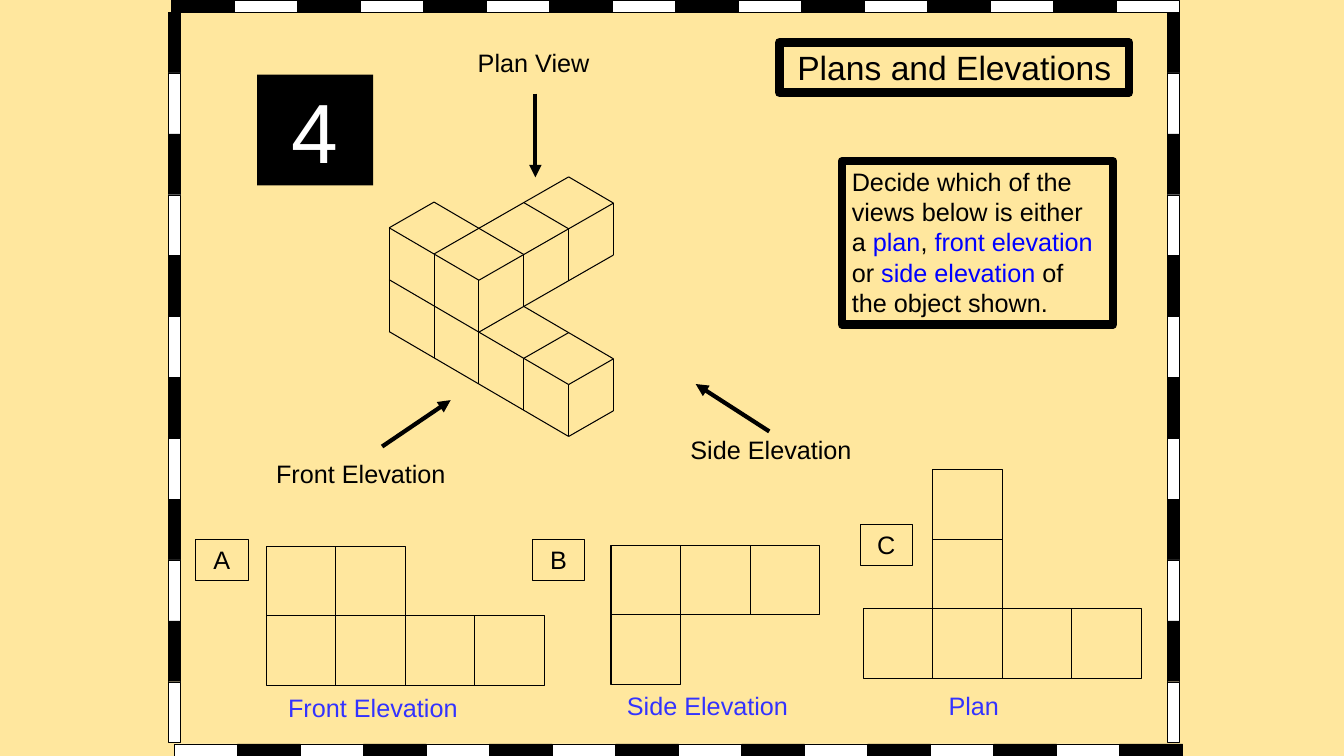
from lxml import etree
from pptx import Presentation
from pptx.dml.color import RGBColor
from pptx.enum.shapes import MSO_CONNECTOR as Connector, MSO_SHAPE as Shape
from pptx.enum.text import MSO_ANCHOR as Anchor, PP_ALIGN as Align
from pptx.oxml.ns import qn
from pptx.util import Inches, Pt

BLACK, WHITE, BLUE, ANSWER = "000000", "FFFFFF", "0000FF", "3333FF"
SAND = "FFE79E"
CELL = 0.69

SOLID_EDGES = [
    ((4, 0, 2), (4, 1, 2)), ((4, 0, 2), (0, 0, 2)), ((4, 0, 2), (4, 0, 1)),
    ((4, 0, 1), (4, 1, 1)), ((4, 0, 1), (0, 0, 1)), ((2, 0, 2), (2, 0, 0)),
    ((3, 0, 2), (3, 0, 1)), ((4, 1, 1), (2, 1, 1)), ((2, 0, 1), (2, 3, 1)),
    ((3, 0, 1), (3, 1, 1)), ((1, 0, 0), (1, 0, 2)), ((2, 0, 0), (2, 3, 0)),
    ((2, 0, 0), (0, 0, 0)), ((1, 0, 0), (1, 3, 0)), ((0, 1, 0), (2, 1, 0)),
    ((4, 1, 1), (4, 1, 2)), ((2, 1, 0), (2, 1, 1)), ((1, 2, 0), (2, 2, 0)),
    ((2, 2, 0), (2, 2, 1)), ((1, 3, 0), (2, 3, 0)), ((2, 3, 0), (2, 3, 1)),
    ((0, 0, 0), (0, 0, 2)), ((0, 0, 0), (0, 1, 0)),
]
VIEWS = [
    ("A", (1.94, 5.35), (2.64, 5.42), ["##", "####"], "Front Elevation", (2.76, 6.82)),
    ("B", (5.28, 5.35), (6.06, 5.41), ["###", "#"], "Side Elevation", (6.12, 6.8)),
    ("C", (8.53, 5.2), (8.56, 4.66), [" #", " #", "####"], "Plan", (9.31, 6.8)),
]
DIRECTIONS = [
    ("Front Elevation", (2.64, 4.5), (3.79, 4.43), (4.47, 3.97)),
    ("Side Elevation", (6.75, 4.26), (7.63, 4.28), (6.9, 3.81)),
    ("Plan View", (4.64, 0.42), (5.31, 0.93), (5.31, 1.76)),
]


def color(value):
    return RGBColor.from_string(value)


def write(frame, runs, size=18, align=Align.LEFT):
    layout = {"word_wrap": True, "vertical_anchor": Anchor.TOP}
    for key, value in layout.items():
        setattr(frame, key, value)
    paragraph = frame.paragraphs[0]
    paragraph.alignment = align
    for text, ink in runs:
        run = paragraph.add_run()
        run.text = text
        for key, value in {"name": "Arial", "size": Pt(size)}.items():
            setattr(run.font, key, value)
        run.font.color.rgb = color(ink)


def add_label(slide, text, corner, ink=BLACK):
    label = slide.shapes.add_textbox(*map(Inches, (*corner, 2.2, 0.4)))
    write(label.text_frame, [(text, ink)])


def add_box(slide, left, top, width, height, fill=None, weight=0.75):
    box = slide.shapes.add_shape(
        Shape.RECTANGLE, *map(Inches, (left, top, width, height)))
    box.shadow.inherit = False
    if fill:
        box.fill.solid()
        box.fill.fore_color.rgb = color(fill)
    else:
        box.fill.background()
    if weight:
        box.line.color.rgb = color(BLACK)
        box.line.width = Pt(weight)
    else:
        box.line.fill.background()
    return box


def add_line(slide, start, end, weight=0.75, arrow=False):
    line = slide.shapes.add_connector(
        Connector.STRAIGHT, *map(Inches, (*start, *end)))
    line.line.color.rgb = color(BLACK)
    line.line.width = Pt(weight)
    if arrow:
        etree.SubElement(line.line._get_or_add_ln(), qn("a:tailEnd"), type="triangle")
    etree.SubElement(line._element.spPr, qn("a:effectLst"))


def project(corner):
    along, back, down = corner
    return (3.86 + 0.445 * (along + back),
            2.26 + 0.26 * along - 0.255 * back + 0.515 * down)


def add_solid(slide):
    for start, end in SOLID_EDGES:
        add_line(slide, project(start), project(end))


def add_view(slide, letter, tag_corner, grid_corner, rows, answer, answer_corner):
    left, top = grid_corner
    for row, cells in enumerate(rows):
        for column, mark in enumerate(cells):
            if mark == "#":
                add_box(slide, left + column * CELL, top + row * CELL, CELL, CELL)
    tag = add_box(slide, *tag_corner, 0.52, 0.41)
    write(tag.text_frame, [(letter, BLACK)], align=Align.CENTER)
    add_label(slide, answer, answer_corner, ANSWER)


def add_border(slide):
    long_side, short_side, depth = 0.625, 0.604, 0.12
    for left, top, fills in ((1.7, 0, (BLACK, WHITE)), (1.73, 7.38, (WHITE, BLACK))):
        for i in range(16):
            add_box(slide, left + i * long_side, top, long_side, depth,
                    fills[i % 2], 0.25)
    for left in (11.58, 1.67):
        for i in range(12):
            add_box(slide, left, depth + i * short_side, depth, short_side,
                    (BLACK, WHITE)[i % 2], 0.25)


def main():
    deck = Presentation()
    deck.slide_width, deck.slide_height = Inches(13.33), Inches(7.5)
    slide = deck.slides.add_slide(deck.slide_layouts[6])
    slide.background.fill.solid()
    slide.background.fill.fore_color.rgb = color(SAND)

    add_solid(slide)
    title = add_box(slide, 7.73, 0.42, 3.47, 0.5, weight=6)
    write(title.text_frame, [("Plans and Elevations", BLACK)], 24, Align.CENTER)
    for text, corner, start, end in DIRECTIONS:
        add_line(slide, start, end, 3, arrow=True)
        add_label(slide, text, corner)
    task = add_box(slide, 8.35, 1.6, 2.69, 1.62, weight=6)
    write(task.text_frame, [
        ("Decide which of the views below is either a ", BLACK), ("plan", BLUE),
        (", ", BLACK), ("front elevation", BLUE), (" or ", BLACK),
        ("side elevation", BLUE), (" of the object shown.", BLACK)])
    for view in VIEWS:
        add_view(slide, *view)
    add_border(slide)
    number = add_box(slide, 2.55, 0.74, 1.15, 1.1, BLACK, 0)
    write(number.text_frame, [("4", WHITE)], 60, Align.CENTER)
    deck.save("out.pptx")


if __name__ == "__main__":
    main()
